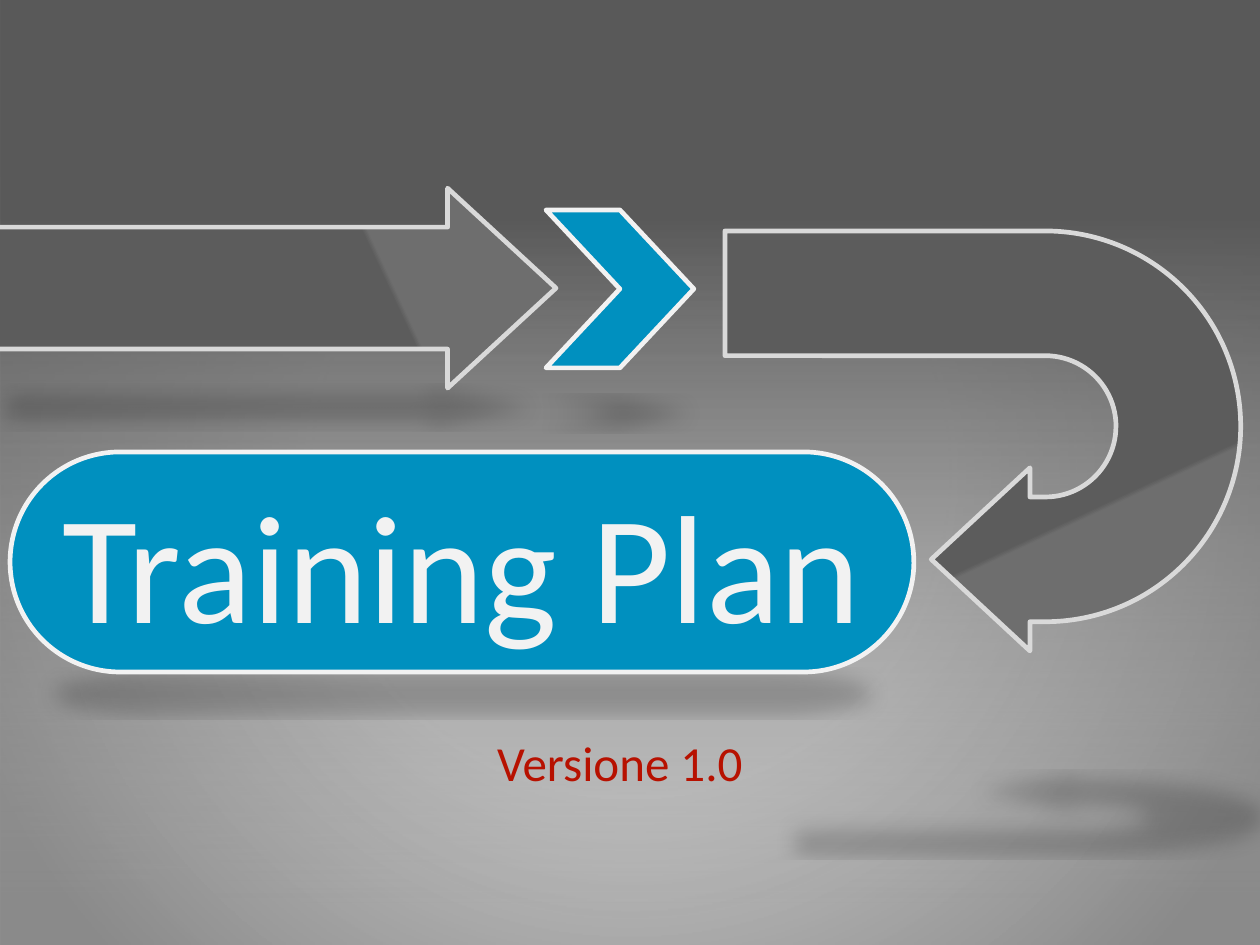
from lxml import etree
from pptx import Presentation
from pptx.dml.color import RGBColor
from pptx.enum import shapes, text
from pptx.oxml import parse_xml
from pptx.oxml.ns import nsdecls, qn
from pptx.util import Inches, Pt

COLORS = {
    "blue": "0090BF", "white": "F2F2F2", "outline": "D9D9D9", "red": "B71100",
    "light": "6E6E6E", "dark": "5C5C5C", "shadow": "000000",
    "silver": "B8B8B8", "grey": "8A8A8A", "slate": "595959", "mist": "A6A6A6",
}
CIRCLE = ('<a:path path="circle"><a:fillToRect l="50000" t="50000" '
          'r="50000" b="50000"/></a:path>')
ARROW_STOPS = [(31, "light", 100), (32, "dark", 100)]


def set_gradient(fill_parent, stops, angle=None):
    """Replace the solid fill by stops of (position, colour, opacity); circular without an angle."""
    stop_xml = "".join(
        f'<a:gs pos="{pos * 1000}"><a:srgbClr val="{COLORS[color]}">'
        f'<a:alpha val="{opacity * 1000}"/></a:srgbClr></a:gs>'
        for pos, color, opacity in stops)
    way = CIRCLE if angle is None else f'<a:lin ang="{angle * 60000}" scaled="0"/>'
    solid = fill_parent.find(qn("a:solidFill"))
    fill_parent.replace(solid, parse_xml(
        f'<a:gradFill {nsdecls("a")} rotWithShape="1"><a:gsLst>{stop_xml}</a:gsLst>{way}</a:gradFill>'))


def write(box, words, size, color, anchor):
    frame = box.text_frame
    frame.word_wrap = True
    frame.auto_size = text.MSO_AUTO_SIZE.NONE
    frame.vertical_anchor = anchor
    para = frame.paragraphs[0]
    para.alignment = text.PP_ALIGN.CENTER
    span = para.add_run()
    span.text = words
    span.font.name = "Calibri"
    span.font.size = Pt(size)
    span.font.color.rgb = RGBColor.from_string(COLORS[color])


deck = Presentation()
deck.slide_width = Inches(7.5)
deck.slide_height = deck.slide_width * 3 // 4
page = deck.slides.add_slide(deck.slide_layouts[5])
kinds = shapes.MSO_SHAPE

# Backdrop
page.background.fill.solid()
page.background.fill.fore_color.rgb = RGBColor.from_string(COLORS["outline"])
set_gradient(page.element.cSld.find(".//" + qn("p:bgPr")),
             [(40, "outline", 100), (100, "mist", 100)])
for top, stops, angle in [
    (0, [(40, "silver", 80), (90, "grey", 100)], None),
    (-0.24, [(27, "slate", 100), (100, "mist", 0)], 90),
]:
    layer = page.shapes.add_shape(kinds.RECTANGLE, 0, Inches(top), deck.slide_width, deck.slide_height)
    layer.shadow.inherit = False
    layer.line.fill.background()
    layer.fill.solid()
    set_gradient(layer.element.spPr, stops, angle)

# Arrows and title pill: kind, place, adjustments, rotation, outline, shadow distance and angle
FLOW = [
    (kinds.U_TURN_ARROW, (4.6, 1.09, 2.5, 3.07), [0.297, 0.218, 0.235, 0.534, 0.6], 90, "outline", 4, 90),
    (kinds.CHEVRON, (3.25, 1.25, 0.88, 0.94), [], 0, "white", 13, 90),
    (kinds.ROUNDED_RECTANGLE, (0.06, 2.69, 5.38, 1.31), [0.5], 0, "white", 0, 109),
    (kinds.RIGHT_ARROW, (-0.12, 1.12, 3.43, 1.19), [0.61, 0.542], 0, "outline", 0, 90),
]
for kind, place, adjustments, rotation, outline, distance, angle in FLOW:
    part = page.shapes.add_shape(kind, *map(Inches, place))
    for index, value in enumerate(adjustments):
        part.adjustments[index] = value
    part.rotation = rotation
    part.fill.solid()
    part.fill.fore_color.rgb = RGBColor.from_string(COLORS["blue"])
    if outline == "outline":
        set_gradient(part.element.spPr, ARROW_STOPS, 155)
    part.line.color.rgb = RGBColor.from_string(COLORS[outline])
    part.line.width = Pt(2)
    part.shadow.inherit = False
    effects = part.element.spPr.find(qn("a:effectLst"))
    shadow = etree.SubElement(
        effects, qn("a:outerShdw"), blurRad=str(Pt(9)), dist=str(Pt(distance)),
        dir=str(angle * 60000), sx="90000", sy="-19000", rotWithShape="0")
    tint = etree.SubElement(shadow, qn("a:srgbClr"), val=COLORS["shadow"])
    etree.SubElement(tint, qn("a:alpha"), val="18000")
    if kind == kinds.ROUNDED_RECTANGLE:
        pill = part

# Wording
title = page.shapes.title
title.left, title.top, title.width, title.height = map(Inches, (0.19, 2.69, 5.12, 1.31))
write(title, "Training Plan", 66, "white", text.MSO_ANCHOR.MIDDLE)
pill.element.addnext(title.element)

version = page.shapes.add_textbox(*map(Inches, (1.63, 4.31, 4.12, 0.49)))
write(version, "Versione 1.0", 21, "red", text.MSO_ANCHOR.TOP)

deck.save("out.pptx")
